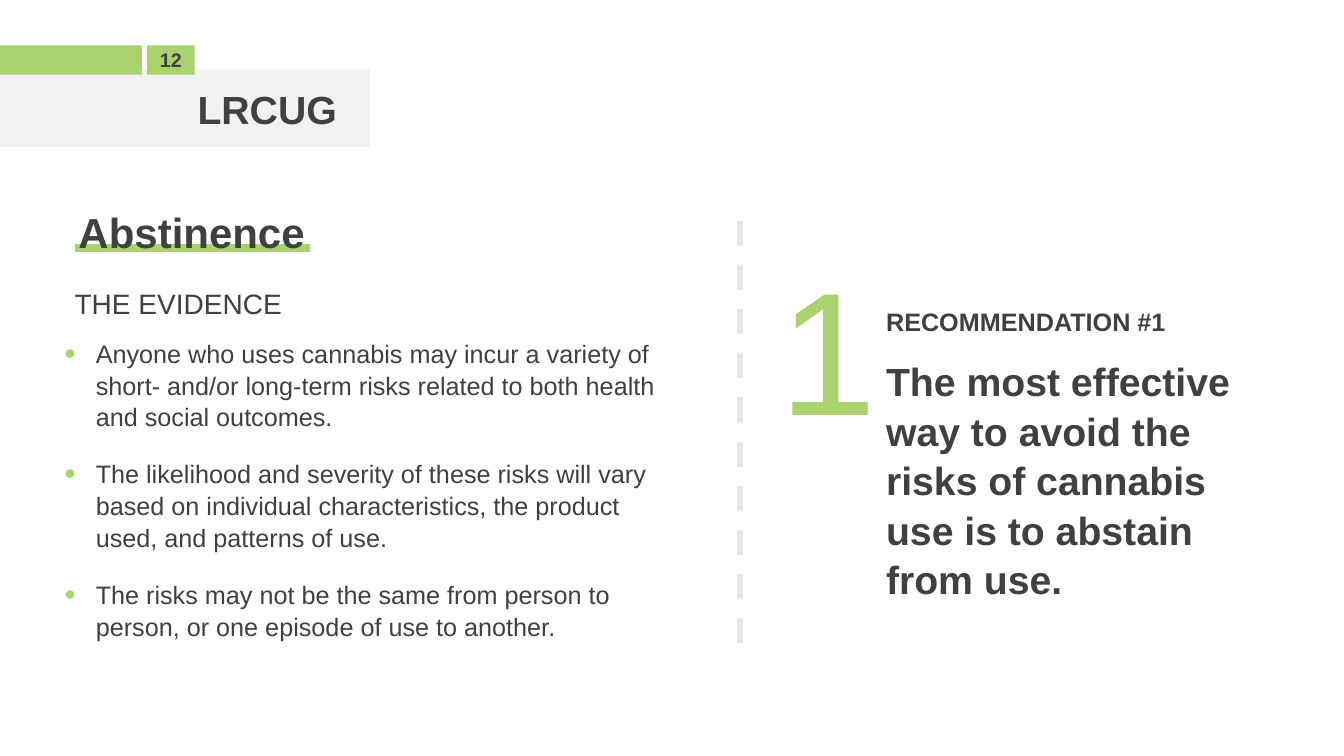
from pptx import Presentation
from pptx.dml.color import RGBColor
from pptx.enum.dml import MSO_LINE
from pptx.enum.shapes import MSO_CONNECTOR, MSO_SHAPE
from pptx.enum.text import MSO_ANCHOR, MSO_AUTO_SIZE, PP_ALIGN
from pptx.oxml.ns import qn
from pptx.util import Inches, Pt
from lxml import etree

RECT = MSO_SHAPE.RECTANGLE
STRAIGHT = MSO_CONNECTOR.STRAIGHT
DASH = MSO_LINE.DASH
TOP, MIDDLE = MSO_ANCHOR.TOP, MSO_ANCHOR.MIDDLE
LEFT, CENTER, RIGHT = PP_ALIGN.LEFT, PP_ALIGN.CENTER, PP_ALIGN.RIGHT
NO_FIT = MSO_AUTO_SIZE.NONE

COLORS = {"ink": "414041", "green": "AAD26F", "band": "F2F2F2", "rule": "E7E6E6"}
FACTS = [
    "Anyone who uses cannabis may incur a variety of short- and/or long-term "
    "risks related to both health and social outcomes.",
    "The likelihood and severity of these risks will vary based on individual "
    "characteristics, the product used, and patterns of use.",
    "The risks may not be the same from person to person, or one episode of "
    "use to another.",
]
ADVICE = ("The most effective way to avoid the risks of cannabis use is to "
          "abstain from use.")


def color(name):
    return RGBColor.from_string(COLORS[name])


def add_bar(slide, box, fill):
    bar = slide.shapes.add_shape(RECT, *map(Inches, box))
    bar.shadow.inherit = False
    bar.fill.solid()
    bar.fill.fore_color.rgb = color(fill)
    bar.line.fill.background()


def add_line(slide, ends, tone, width, dash=None):
    line = slide.shapes.add_connector(STRAIGHT, *map(Inches, ends))
    line.line.color.rgb = color(tone)
    line.line.width = Pt(width)
    if dash is not None:
        line.line.dash_style = dash
    etree.SubElement(line._element.spPr, qn("a:effectLst"))


def set_frame(frame, anchor=TOP, inset=True):
    frame.word_wrap = True
    frame.auto_size = NO_FIT
    frame.vertical_anchor = anchor
    if not inset:
        frame.margin_left = frame.margin_right = 0
        frame.margin_top = frame.margin_bottom = 0


def style(para, text, size, bold=False, tone="ink", align=LEFT):
    para.text = text
    para.alignment = align
    font = para.font
    font.name, font.size, font.bold = "Arial", Pt(size), bold
    font.color.rgb = color(tone)


def add_frame(slide, box, anchor=TOP, inset=True):
    frame = slide.shapes.add_textbox(*map(Inches, box)).text_frame
    set_frame(frame, anchor, inset)
    return frame


def add_text(slide, box, text, size, inset=True, **look):
    frame = add_frame(slide, box, inset=inset)
    style(frame.paragraphs[0], text, size, **look)


def set_bullet(para):
    props = para._p.get_or_add_pPr()
    props.set("marL", str(Inches(0.31)))
    props.set("indent", str(-Inches(0.31)))
    tint = etree.SubElement(props, qn("a:buClr"))
    etree.SubElement(tint, qn("a:srgbClr"), val=COLORS["green"])
    etree.SubElement(props, qn("a:buSzPct"), val="125000")
    etree.SubElement(props, qn("a:buFont"), typeface="Arial")
    etree.SubElement(props, qn("a:buChar"), char="•")


def add_list(slide, box, items):
    frame = add_frame(slide, box, inset=False)
    for i, item in enumerate(items):
        para = frame.add_paragraph() if i else frame.paragraphs[0]
        style(para, item, 18)
        para.line_spacing = 1.05
        para.space_before = Pt(18)
        set_bullet(para)


def set_title(slide, box, text):
    title = slide.shapes.title
    title.left, title.top, title.width, title.height = map(Inches, box)
    set_frame(title.text_frame, MIDDLE)
    style(title.text_frame.paragraphs[0], text, 28, bold=True, align=RIGHT)
    # Bring the title in front of its band
    slide.shapes._spTree.append(title._element)


def add_advice(slide, box):
    frame = add_frame(slide, box, MIDDLE)
    head, body = frame.paragraphs[0], frame.add_paragraph()
    style(head, "RECOMMENDATION #1", 18, bold=True)
    style(body, ADVICE, 28, bold=True)
    head.line_spacing = body.line_spacing = 1.05
    body.space_before = Pt(13.5)


def main():
    deck = Presentation()
    deck.slide_width, deck.slide_height = Inches(13.33), Inches(7.5)
    slide = deck.slides.add_slide(deck.slide_layouts[5])

    # Header
    add_bar(slide, (0, 0.69, 3.67, 0.77), "band")
    set_title(slide, (0.22, 0.79, 3.22, 0.57), "LRCUG")
    add_bar(slide, (0, 0.45, 1.41, 0.29), "green")
    add_bar(slide, (1.46, 0.45, 0.47, 0.29), "green")
    add_text(slide, (1.46, 0.43, 0.47, 0.34), "12", 14, bold=True, align=CENTER)

    # Evidence
    add_line(slide, (0.74, 2.46, 3.07, 2.46), "green", 6)
    add_text(slide, (0.68, 2, 5.01, 0.61), "Abstinence", 30, bold=True)
    add_text(slide, (0.74, 2.84, 5.49, 0.34), "THE EVIDENCE", 20, inset=False)
    add_list(slide, (0.64, 3.34, 6.09, 3.69), FACTS)

    # Recommendation
    add_line(slide, (7.34, 2.19, 7.34, 6.56), "rule", 4.5, DASH)
    add_text(slide, (7.63, 2.34, 1.55, 2.2), "1", 125, tone="green")
    add_advice(slide, (8.69, 1.93, 3.7, 5.14))

    deck.save("out.pptx")


if __name__ == "__main__":
    main()
